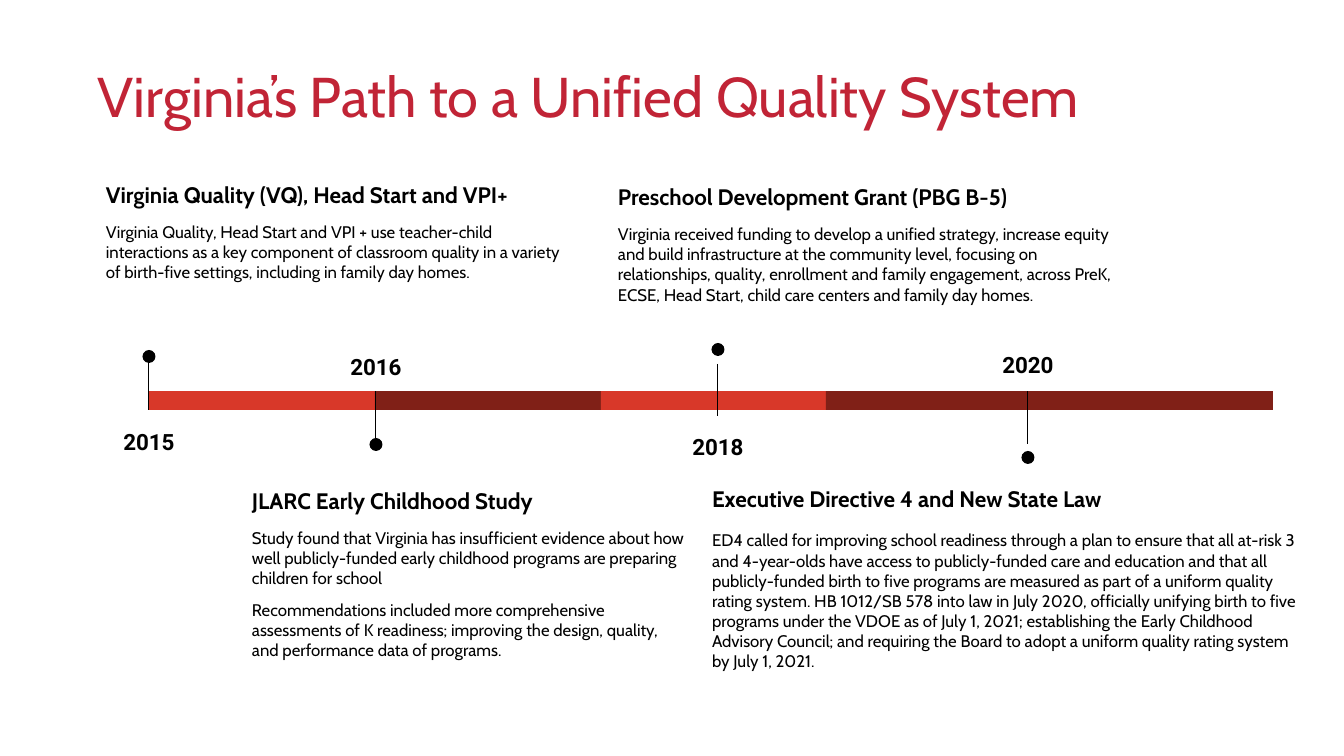
"""Build a timeline slide on Virginia's path to a unified quality system."""
from lxml import etree
from pptx import Presentation, util as u
from pptx.dml.color import RGBColor
from pptx.enum import shapes, text
from pptx.oxml.ns import qn

TITLE = "Virginia’s Path to a Unified Quality System"
RED, DARK_RED, TITLE_RED, BLACK = "D83829", "802017", "C12436", "000000"

EVENTS = [
    dict(year="2015", marker=149, bar=(149, 226), color=RED,
         line=(358, 410), dot=350, year_top=411,
         box=(93, 168, 486, 171), heading_spacing=1.0, gaps=[10],
         heading="Virginia Quality (VQ), Head Start and VPI+",
         body=["Virginia Quality, Head Start and VPI + use teacher-child interactions as a key "
               "component of classroom quality in a variety of birth-five settings, including "
               "in family day homes."]),
    dict(year="2016", marker=376, bar=(375, 261), color=DARK_RED,
         line=(444, 391), dot=438, year_top=336,
         box=(239, 474, 461, 139), heading_spacing=1.0, gaps=[10, 8],
         heading="JLARC Early Childhood Study",
         body=["Study found that Virginia has insufficient evidence about how well "
               "publicly-funded early childhood programs are preparing children for school",
               "Recommendations included more comprehensive assessments of K readiness; "
               "improving the design, quality, and performance data of programs."]),
    dict(year="2018", marker=718, bar=(601, 279), color=RED,
         line=(364, 416), dot=343, year_top=416,
         box=(605, 166, 541, 202), heading_spacing=1.15, gaps=[10],
         heading="Preschool Development Grant (PBG B-5)",
         body=["Virginia received funding to develop a unified strategy, increase equity and "
               "build infrastructure at the community level, focusing on relationships, "
               "quality, enrollment and family engagement, across PreK, ECSE, Head Start, "
               "child care centers and family day homes."]),
    dict(year="2020", marker=1028, bar=(826, 447), color=DARK_RED,
         line=(444, 391), dot=451, year_top=334,
         box=(699, 472, 618, 146), heading_spacing=1.0, gaps=[13],
         heading="Executive Directive 4 and New State Law",
         body=["ED4 called for improving school readiness through a plan to ensure that all "
               "at-risk 3 and 4-year-olds have access to publicly-funded care and education "
               "and that all publicly-funded birth to five programs are measured as part of a "
               "uniform quality rating system. HB 1012/SB 578 into law in July 2020, "
               "officially unifying birth to five programs under the VDOE as of July 1, 2021; "
               "establishing the Early Childhood Advisory Council; and requiring the Board to "
               "adopt a uniform quality rating system by July 1, 2021."]),
]
BAR_TOP, BAR_HEIGHT = 391, 19
DOT = 13
YEAR_WIDTH, YEAR_HEIGHT = 110, 54


def px(length):
    return u.Emu(round(length * 914400 / 100.8))


def rgb(color):
    return RGBColor.from_string(color)


def add_block(slide, box, margins, anchor=text.MSO_ANCHOR.TOP):
    frame = slide.shapes.add_textbox(*map(px, box)).text_frame
    frame.word_wrap = True
    frame.vertical_anchor = anchor
    frame.margin_left = frame.margin_right = px(margins[0])
    frame.margin_top = frame.margin_bottom = px(margins[1])
    return frame


def write(frame, words, size=12, font="Cabin", color=BLACK, bold=False,
          align=text.PP_ALIGN.LEFT, spacing=1.0, before=0):
    paragraph = frame.paragraphs[0] if not frame.text else frame.add_paragraph()
    paragraph.alignment = align
    paragraph.line_spacing = spacing
    if before:
        paragraph.space_before = u.Pt(before)
    run = paragraph.add_run()
    run.text = words
    run.font.size = u.Pt(size)
    run.font.name = font
    run.font.bold = bold
    run.font.color.rgb = rgb(color)


def add_solid(slide, kind, box, color):
    shape = slide.shapes.add_shape(kind, *map(px, box))
    shape.shadow.inherit = False
    shape.fill.solid()
    shape.fill.fore_color.rgb = rgb(color)
    shape.line.fill.background()


def add_stem(slide, x, start, end):
    stem = slide.shapes.add_connector(
        shapes.MSO_CONNECTOR.STRAIGHT, px(x), px(start), px(x), px(end))
    stem.line.color.rgb = rgb(BLACK)
    stem.line.width = u.Pt(0.75)
    etree.SubElement(stem._element.spPr, qn("a:effectLst"))


def add_event(slide, event):
    left, width = event["bar"]
    marker = event["marker"]
    add_solid(slide, shapes.MSO_SHAPE.RECTANGLE,
              (left, BAR_TOP, width, BAR_HEIGHT), event["color"])
    add_stem(slide, marker, *event["line"])
    add_solid(slide, shapes.MSO_SHAPE.OVAL,
              (marker - DOT / 2, event["dot"], DOT, DOT), BLACK)
    year_box = (marker - YEAR_WIDTH / 2, event["year_top"], YEAR_WIDTH, YEAR_HEIGHT)
    write(add_block(slide, year_box, (13, 13)), event["year"], size=16, font="Roboto",
          bold=True, align=text.PP_ALIGN.CENTER, spacing=1.15)
    story = add_block(slide, event["box"], (13, 13))
    write(story, event["heading"], size=16, bold=True, spacing=event["heading_spacing"])
    for words, gap in zip(event["body"], event["gaps"]):
        write(story, words, before=gap)


def main():
    presentation = Presentation()
    presentation.slide_width, presentation.slide_height = px(1344), px(756)
    slide = presentation.slides.add_slide(presentation.slide_layouts[6])
    for event in EVENTS:
        add_event(slide, event)
    title = add_block(slide, (88, 57, 1250, 84), (10, 5), text.MSO_ANCHOR.MIDDLE)
    write(title, TITLE, size=40, color=TITLE_RED, spacing=0.9)
    presentation.save("out.pptx")


if __name__ == "__main__":
    main()
